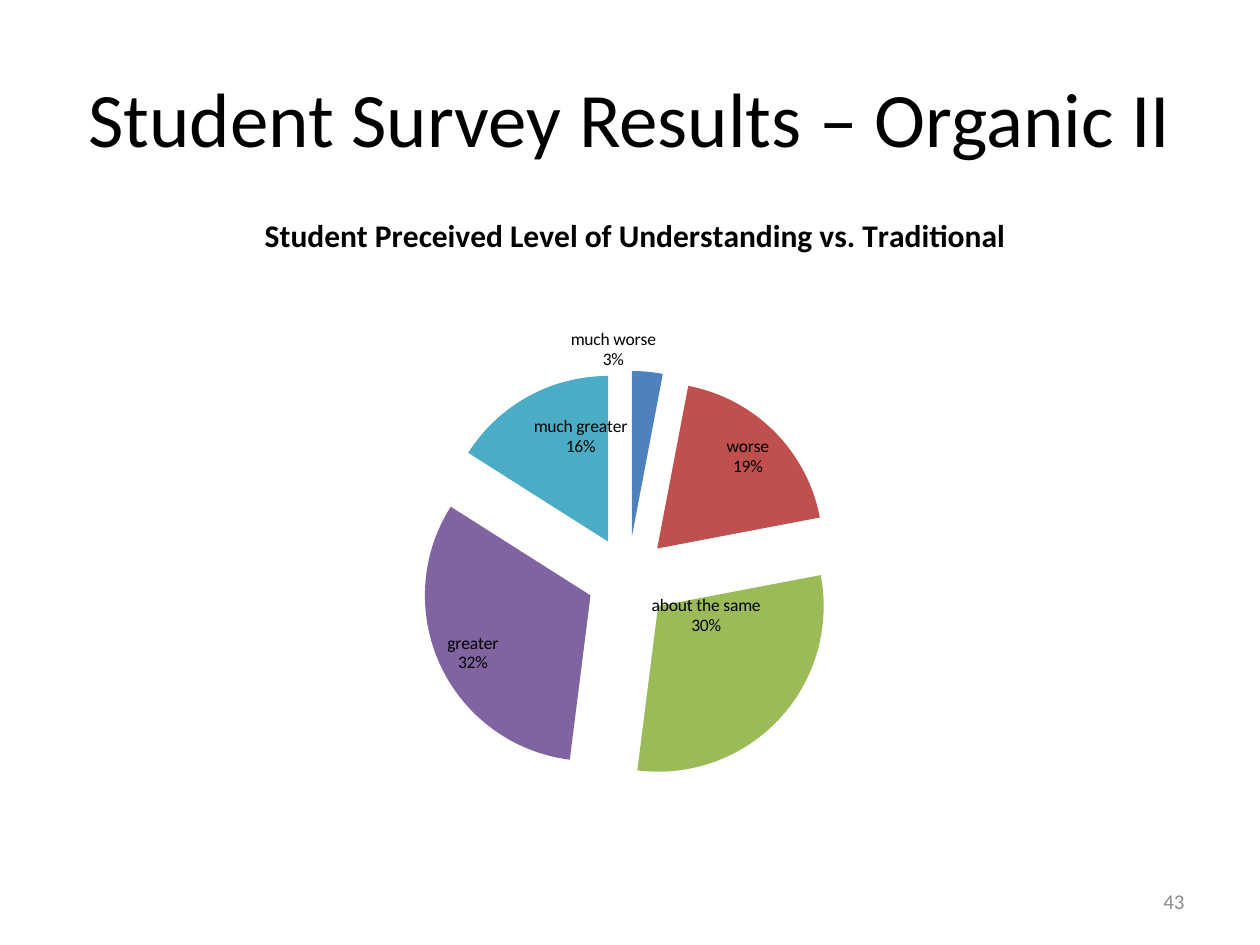
from pptx import Presentation
from pptx.chart.data import CategoryChartData
from pptx.dml.color import RGBColor
from pptx.enum.chart import XL_CHART_TYPE, XL_LABEL_POSITION
from pptx.enum.text import MSO_ANCHOR, PP_ALIGN
from pptx.oxml import parse_xml
from pptx.oxml.ns import nsdecls, qn
from pptx.util import Pt

PX = 914400 / 126
FONT = "Calibri"
COLORS = {
    "text": "000000",
    "number": "8C8C8C",
    "much worse": "4F81BD",
    "worse": "C0504D",
    "about the same": "9BBB59",
    "greater": "8064A2",
    "much greater": "4BACC6",
}
ANSWERS = {
    "much worse": 3,
    "worse": 19,
    "about the same": 30,
    "greater": 32,
    "much greater": 16,
}
# Label shifts in px from the inside end of the slice
LABEL_SHIFTS = {
    "much worse": (9, -49),
    "about the same": (-13, -79),
    "greater": (0, 10),
    "much greater": (2, 14),
}


def emu(*lengths):
    return [round(length * PX) for length in lengths]


def set_font(font, size, color="text", bold=False):
    for name, value in {"name": FONT, "size": Pt(size), "bold": bold}.items():
        setattr(font, name, value)
    font.color.rgb = RGBColor.from_string(COLORS[color])


def add_text(page, box, text, size, align, color="text"):
    frame = page.shapes.add_textbox(*emu(*box)).text_frame
    frame.word_wrap = True
    frame.vertical_anchor = MSO_ANCHOR.MIDDLE
    para = frame.paragraphs[0]
    para.alignment = align
    span = para.add_run()
    span.text = text
    set_font(span.font, size, color)


def set_layout(parent, index, box, lengths, edge=False, target=""):
    """Place a chart part by px lengths (x, y and maybe w, h) within the chart box."""
    modes = '<c:xMode val="edge"/><c:yMode val="edge"/>' if edge else ""
    sizes = box[2:] * 2
    shares = "".join(
        f'<c:{tag} val="{length / size:.4f}"/>'
        for tag, length, size in zip("xywh", lengths, sizes)
    )
    for old in parent.findall(qn("c:layout")):
        parent.remove(old)
    parent.insert(index, parse_xml(
        f'<c:layout {nsdecls("c")}><c:manualLayout>{target}{modes}{shares}'
        "</c:manualLayout></c:layout>"
    ))


def add_separator(labels):
    separator = parse_xml(f'<c:separator {nsdecls("c")}>\n</c:separator>')
    labels.find(qn("c:showBubbleSize")).addnext(separator)


def label_slices(series, box):
    labels = series.data_labels
    for name in ("show_category_name", "show_percentage"):
        setattr(labels, name, True)
    labels.show_value = False
    labels.position = XL_LABEL_POSITION.INSIDE_END
    set_font(labels.font, 10)
    root = labels._element
    if root.find(qn("c:showBubbleSize")) is None:
        bubble = parse_xml(f'<c:showBubbleSize {nsdecls("c")} val="0"/>')
        root.find(qn("c:showPercent")).addnext(bubble)
    add_separator(root)

    names = list(ANSWERS)
    for name in LABEL_SHIFTS:
        label = series.points[names.index(name)].data_label
        label.position = XL_LABEL_POSITION.INSIDE_END
        set_font(label.font, 10)
    for label in root.findall(qn("c:dLbl")):
        index = int(label.find(qn("c:idx")).get("val"))
        set_layout(label, 1, box, LABEL_SHIFTS[names[index]])
        for tag, shown in {"showVal": 0, "showCatName": 1, "showPercent": 1}.items():
            label.find(qn(f"c:{tag}")).set("val", str(shown))
        add_separator(label)


def explode_slices(series):
    followers = [series._element.find(qn("c:dPt"))]
    followers += series._element.findall(f'{qn("c:dPt")}/{qn("c:spPr")}')
    for follower in followers:
        follower.addprevious(parse_xml(f'<c:explosion {nsdecls("c")} val="25"/>'))


def add_survey_pie(page, box, title):
    data = CategoryChartData()
    data.categories = list(ANSWERS)
    data.add_series("Series 1", list(ANSWERS.values()))
    chart = page.shapes.add_chart(XL_CHART_TYPE.PIE, *emu(*box), data).chart
    chart.has_legend = False
    set_font(chart.font, 10)

    chart.has_title = True
    para = chart.chart_title.text_frame.paragraphs[0]
    span = para.add_run()
    span.text = title
    set_font(span.font, 18, bold=True)
    set_layout(chart.chart_title._element, 1, box, (186, 19), edge=True)

    plot = chart.plots[0]
    plot.vary_by_categories = True
    set_layout(plot._element.getparent(), 0, box, (1, 182, 1108, 414), edge=True,
               target='<c:layoutTarget val="inner"/>')

    series = plot.series[0]
    for index, name in enumerate(ANSWERS):
        fill = series.points[index].format.fill
        fill.solid()
        fill.fore_color.rgb = RGBColor.from_string(COLORS[name])
    explode_slices(series)
    label_slices(series, box)


def main():
    deck = Presentation()
    deck.slide_width, deck.slide_height = emu(1260, 945)
    page = deck.slides.add_slide(deck.slide_layouts[6])
    add_text(page, (63, 38, 1134, 158), "Student Survey Results – Organic II",
             44, PP_ALIGN.CENTER)
    add_survey_pie(page, (73, 189, 1124, 662),
                   "Student Preceived Level of Understanding vs. Traditional")
    add_text(page, (903, 876, 294, 50), "43", 12, PP_ALIGN.RIGHT, "number")
    deck.save("out.pptx")


if __name__ == "__main__":
    main()
